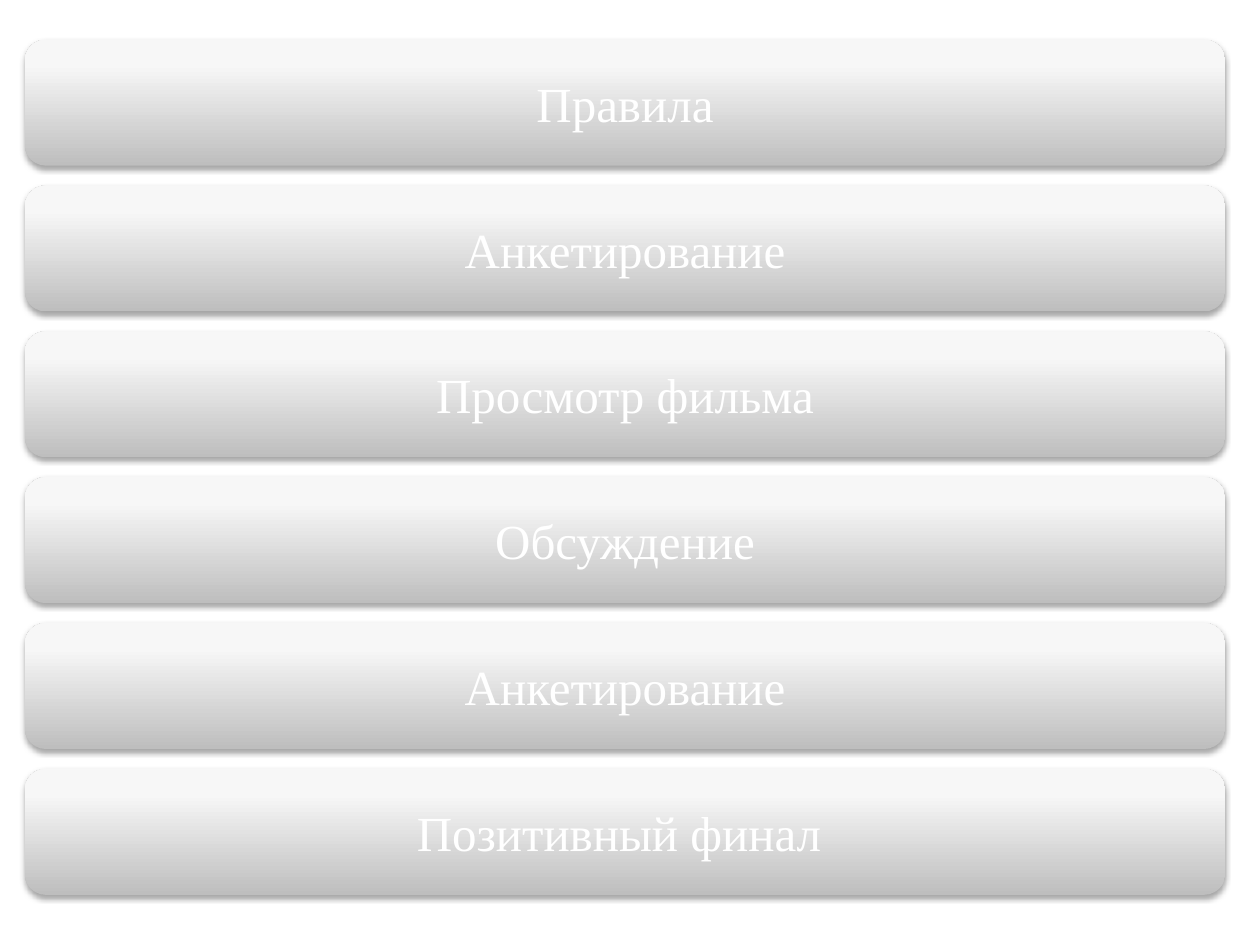
from copy import deepcopy
from dataclasses import dataclass

from lxml import etree
from pptx import Presentation
from pptx.dml.color import RGBColor
from pptx.enum import shapes, text
from pptx.oxml import ns
from pptx.util import Cm, Pt


@dataclass(frozen=True)
class Theme:
    """Colours, type and shadow of the slide."""
    font: str = "Times New Roman"
    size: int = 28
    ink: str = "FFFFFF"
    gradient: tuple = ((0, "BEBEBE"), (0.8, "F7F7F7"), (1, "F8F8F8"))
    shadow: str = "000000"
    shadow_alpha: int = 35
    shadow_blur: float = 3.1
    shadow_distance: float = 1.8


THEME = Theme()
STAGES = ("Правила", "Анкетирование", "Просмотр фильма",
          "Обсуждение", "Анкетирование", "Позитивный финал ")


def apply(target, values):
    """Set each attribute named in values on target."""
    for name, value in values.items():
        setattr(target, name, value)


def shade(bar):
    """Fill a bar with the theme gradient, dark at the bottom."""
    bar.fill.gradient()
    bar.fill.gradient_angle = 90
    stop_list = bar.element.spPr.find(".//" + ns.qn("a:gsLst"))
    stop_list.append(deepcopy(stop_list[-1]))
    for stop, (position, colour) in zip(bar.fill.gradient_stops, THEME.gradient):
        stop.position = position
        stop.color.rgb = RGBColor.from_string(colour)
    bar.line.fill.background()


def cast_shadow(bar):
    """Give a bar a soft shadow that falls straight down."""
    bar.shadow.inherit = False
    effects = bar.element.spPr.find(ns.qn("a:effectLst"))
    outer = etree.SubElement(effects, ns.qn("a:outerShdw"), {
        "blurRad": str(Pt(THEME.shadow_blur)),
        "dist": str(Pt(THEME.shadow_distance)),
        "dir": "5400000", "rotWithShape": "0"})
    colour = etree.SubElement(outer, ns.qn("a:srgbClr"), val=THEME.shadow)
    etree.SubElement(colour, ns.qn("a:alpha"), val=str(THEME.shadow_alpha * 1000))


def add_stage(parent, stage, left, top, width, height):
    """Add one stage bar with its centred label in the given box."""
    bar = parent.add_shape(shapes.MSO_SHAPE.ROUNDED_RECTANGLE,
                           left, top, width, height)
    shade(bar)
    cast_shadow(bar)
    frame = bar.text_frame
    inset = Cm(0.3)
    apply(frame, {"word_wrap": True, "vertical_anchor": text.MSO_ANCHOR.MIDDLE,
                  "margin_left": inset, "margin_right": inset,
                  "margin_top": inset, "margin_bottom": inset})
    label = frame.paragraphs[0]
    label.alignment = text.PP_ALIGN.CENTER
    words = label.add_run()
    words.text = stage
    apply(words.font, {"name": THEME.font, "size": Pt(THEME.size)})
    words.font.color.rgb = RGBColor.from_string(THEME.ink)


def add_agenda(slide, left, top, width, height, gap):
    """Stack the stages as equal bars that fill the given box."""
    agenda = slide.shapes.add_group_shape().shapes
    bar_height = (height - gap * (len(STAGES) - 1)) // len(STAGES)
    for row, stage in enumerate(STAGES):
        add_stage(agenda, stage, left, top + row * (bar_height + gap),
                  width, bar_height)


def main():
    """Build the slide and save it."""
    deck = Presentation()
    apply(deck, {"slide_width": Cm(25.4), "slide_height": Cm(19.05)})
    slide = deck.slides.add_slide(deck.slide_layouts[6])
    add_agenda(slide, Cm(0.5), Cm(0.8), Cm(24.2), Cm(17.24), Cm(0.4))
    deck.save("out.pptx")


if __name__ == "__main__":
    main()
